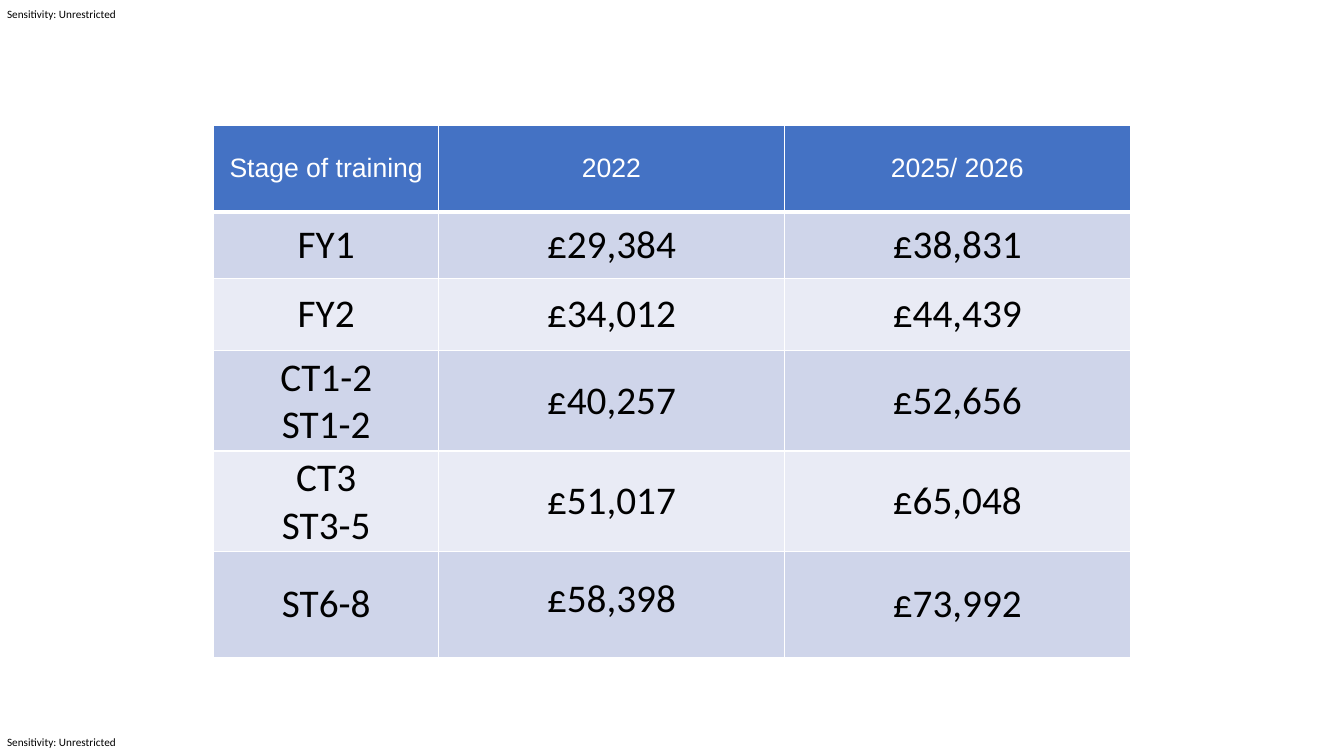
from lxml import etree
from pptx import Presentation
from pptx import util as u
from pptx.dml import color
from pptx.enum import text
from pptx.oxml import ns

COLORS = {
    "header": "4472C4",
    "band_dark": "CFD5EA",
    "band_light": "E9EBF5",
    "white": "FFFFFF",
    "black": "000000",
}
FORMATS = {
    "label": {"size": u.Pt(8), "name": "Calibri", "bold": False},
    "header": {"size": u.Pt(19), "name": "Arial", "bold": False},
    "body": {"size": u.Pt(28), "name": "Calibri", "bold": False},
}
CELL_FORMAT = {
    "margin_left": u.Inches(0.06),
    "margin_right": u.Inches(0.06),
    "margin_top": u.Inches(0.03),
    "margin_bottom": u.Inches(0.03),
    "vertical_anchor": text.MSO_ANCHOR.MIDDLE,
}
PAY_ROWS = [
    ("Stage of training", "2022", "2025/ 2026"),
    ("FY1", "£29,384", "£38,831"),
    ("FY2", "£34,012", "£44,439"),
    ("CT1-2\nST1-2", "£40,257", "£52,656"),
    ("CT3\nST3-5", "£51,017", "£65,048"),
    ("ST6-8", "£58,398", "£73,992"),
]
COLUMN_WIDTHS = [2.23, 3.43, 3.43]
ROW_HEIGHTS = [0.86, 0.66, 0.72, 0.86, 0.86, 1.06]


def set_attributes(target, values):
    for name, value in values.items():
        setattr(target, name, value)


def format_font(font, style, color_name):
    set_attributes(font, FORMATS[style])
    font.color.rgb = color.RGBColor.from_string(COLORS[color_name])


def add_sensitivity_label(slide, left, top, width, height):
    box = slide.shapes.add_textbox(*map(u.Inches, (left, top, width, height)))
    frame = box.text_frame
    set_attributes(frame, {
        "margin_left": 0, "margin_top": 0, "margin_right": 0, "margin_bottom": 0,
        "word_wrap": False, "auto_size": text.MSO_AUTO_SIZE.SHAPE_TO_FIT_TEXT,
    })
    paragraph = frame.paragraphs[0]
    paragraph.text = "Sensitivity: Unrestricted"
    format_font(paragraph.font, "label", "black")


def add_cell_borders(cell, bottom_width):
    properties = cell._tc.get_or_add_tcPr()
    widths = {"a:lnL": 1, "a:lnR": 1, "a:lnT": 1, "a:lnB": bottom_width}
    for position, (tag, width) in enumerate(widths.items()):
        line = etree.Element(ns.qn(tag), w=str(u.Pt(width)))
        fill = etree.SubElement(line, ns.qn("a:solidFill"))
        etree.SubElement(fill, ns.qn("a:srgbClr"), val=COLORS["white"])
        properties.insert(position, line)


def fill_cell(cell, value, row_index):
    is_header = row_index == 0
    band = "band_dark" if row_index % 2 else "band_light"
    cell.text = value
    set_attributes(cell, CELL_FORMAT)
    cell.fill.solid()
    cell.fill.fore_color.rgb = color.RGBColor.from_string(
        COLORS["header" if is_header else band])
    add_cell_borders(cell, 3 if is_header else 1)
    for paragraph in cell.text_frame.paragraphs:
        paragraph.alignment = text.PP_ALIGN.CENTER
        for run in paragraph.runs:
            format_font(run.font, "header" if is_header else "body",
                        "white" if is_header else "black")


def add_pay_table(slide, left, top):
    frame = slide.shapes.add_table(
        len(ROW_HEIGHTS), len(COLUMN_WIDTHS), u.Inches(left), u.Inches(top),
        u.Inches(sum(COLUMN_WIDTHS)), u.Inches(sum(ROW_HEIGHTS)))
    table = frame.table
    set_attributes(table, {"first_row": False, "horz_banding": False})
    for column, width in zip(table.columns, COLUMN_WIDTHS):
        column.width = u.Inches(width)
    for row_index, (row, height) in enumerate(zip(table.rows, ROW_HEIGHTS)):
        row.height = u.Inches(height)
        for cell, value in zip(row.cells, PAY_ROWS[row_index]):
            fill_cell(cell, value, row_index)
    table.cell(5, 1).margin_bottom = u.Inches(0.13)


def main():
    presentation = Presentation()
    presentation.slide_width = u.Inches(13.33)
    presentation.slide_height = u.Inches(7.5)
    slide = presentation.slides.add_slide(presentation.slide_layouts[6])
    for top in (0.07, 7.3):
        add_sensitivity_label(slide, 0.07, top, 1.1, 0.13)
    add_pay_table(slide, 2.12, 1.24)
    presentation.save("out.pptx")


if __name__ == "__main__":
    main()
